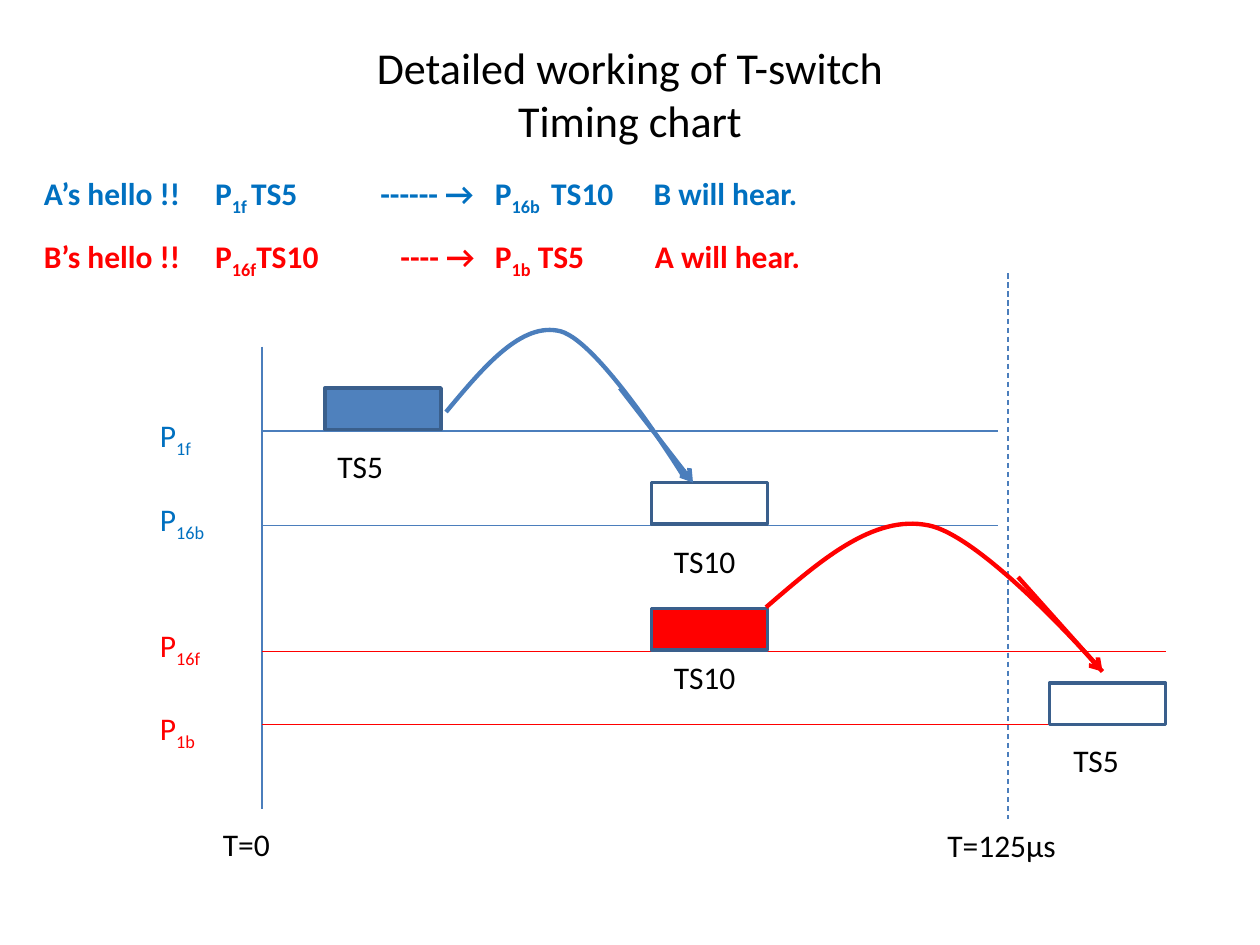
from lxml import etree
from pptx import Presentation
from pptx.dml.color import RGBColor
from pptx.enum.dml import MSO_LINE
from pptx.enum.shapes import MSO_CONNECTOR, MSO_SHAPE
from pptx.enum.text import MSO_ANCHOR, MSO_AUTO_SIZE, PP_ALIGN
from pptx.oxml.ns import qn
from pptx.util import Inches, Pt

COLORS = {
    "black": "000000",
    "white": "FFFFFF",
    "forward": "0070C0",
    "red": "FF0000",
    "line": "4B7EBC",
    "slot": "4F81BD",
    "outline": "3A5F8C",
}
RGB = {name: RGBColor.from_string(value) for name, value in COLORS.items()}

presentation = Presentation()
presentation.slide_width = Inches(10)
presentation.slide_height = Inches(7.5)
slide = presentation.slides.add_slide(presentation.slide_layouts[5])
shapes = slide.shapes


def add_label(left, top, width, parts, color="black", bold=False):
    box = shapes.add_textbox(Inches(left), Inches(top), Inches(width), Inches(0.4))
    box.text_frame.word_wrap = True
    paragraph = box.text_frame.paragraphs[0]
    font = paragraph.font
    font.name, font.size, font.bold = "Calibri", Pt(18), bold
    font.color.rgb = RGB[color]
    for index, text in enumerate(parts):
        run = paragraph.add_run()
        run.text = text
        if index == 1:
            run.font._element.set("baseline", "-25000")


def add_line(start, end, color, width=0.75):
    points = [Inches(value) for value in (*start, *end)]
    connector = shapes.add_connector(MSO_CONNECTOR.STRAIGHT, *points)
    connector.line.color.rgb = RGB[color]
    connector.line.width = Pt(width)
    etree.SubElement(connector._element.spPr, qn("a:effectLst"))
    return connector


title = shapes.title
title.left, title.top = Inches(0.5), Inches(0.3)
title.width, title.height = Inches(9), Inches(0.88)
title.text_frame.text = "Detailed working of T-switch\vTiming chart"
title.text_frame.auto_size = MSO_AUTO_SIZE.NONE
title.text_frame.vertical_anchor = MSO_ANCHOR.MIDDLE
title_paragraph = title.text_frame.paragraphs[0]
title_paragraph.alignment = PP_ALIGN.CENTER
title_paragraph.font.name = "Calibri"
title_paragraph.font.size = Pt(25.2)
title_paragraph.font.color.rgb = RGB["black"]

messages = [
    (1.33, "forward", [
        (0.25, ["A’s hello !!"]), (1.61, ["P", "1f ", "TS5"]), (2.92, ["------ →"]),
        (3.83, ["P", "16b ", " TS10"]), (5.09, ["B will hear."]),
    ]),
    (1.83, "red", [
        (0.25, ["B’s hello !!"]), (1.61, ["P", "16f", "TS10"]), (3.08, ["---- →"]),
        (3.83, ["P", "1b", " TS5"]), (5.1, ["A will hear."]),
    ]),
]
for top, color, columns in messages:
    for left, parts in columns:
        add_label(left, top, 1.5, parts, color, bold=True)

add_line((2.08, 2.75), (2.08, 6.42), "line")
add_line((8, 2.17), (8, 6.5), "line").line.dash_style = MSO_LINE.DASH
add_label(1.67, 6.5, 0.83, ["T=0"])
add_label(7.42, 6.51, 1.42, ["T=125µs"])

channels = [
    ("1f", 3.42, 7.92, 3.25, "line", "forward"),
    ("16b", 4.17, 7.92, 3.92, "line", "forward"),
    ("16f", 5.17, 9.25, 4.92, "red", "red"),
    ("1b", 5.75, 9.25, 5.58, "red", "red"),
]
for name, level, end, label_top, line_color, text_color in channels:
    add_line((2.08, level), (end, level), line_color)
    add_label(1.17, label_top, 0.83, ["P", name], text_color)

slots = [
    ("TS5", 2.58, 3.08, "slot", 2.58, 3.5),
    ("TS10", 5.17, 3.83, "white", 5.25, 4.25),
    ("TS10", 5.17, 4.83, "red", 5.25, 5.17),
    ("TS5", 8.33, 5.42, "white", 8.42, 5.83),
]
for name, left, top, fill, label_left, label_top in slots:
    slot = shapes.add_shape(
        MSO_SHAPE.RECTANGLE, Inches(left), Inches(top), Inches(0.92), Inches(0.33)
    )
    slot.shadow.inherit = False
    slot.fill.solid()
    slot.fill.fore_color.rgb = RGB[fill]
    slot.line.color.rgb = RGB["outline"]
    slot.line.width = Pt(2)
    add_label(label_left, label_top, 0.83, [name])

transfers = [
    ("line", [(3.54, 3.27), (3.84, 2.91), (4.14, 2.55), (4.45, 2.63),
              (4.77, 2.72), (5.43, 3.79), (5.43, 3.79)], (4.92, 3.08), (5.5, 3.83)),
    ("red", [(6.08, 4.82), (6.51, 4.45), (6.93, 4.08), (7.37, 4.17),
             (7.82, 4.26), (8.75, 5.33), (8.75, 5.33)], (8.08, 4.58), (8.75, 5.33)),
]
for color, controls, arrow_start, arrow_end in transfers:
    points = [(Inches(x), Inches(y)) for x, y in controls]
    builder = shapes.build_freeform(*points[0])
    builder.add_line_segments(points[1:], close=False)
    curve = builder.convert_to_shape()
    curve.shadow.inherit = False
    curve.fill.background()
    curve.line.color.rgb = RGB[color]
    curve.line.width = Pt(2.5)
    segments = list(curve._element.iter(qn("a:lnTo")))
    outline = segments[0].getparent()
    for first in range(0, len(segments), 3):
        bezier = etree.SubElement(outline, qn("a:cubicBezTo"))
        for segment in segments[first:first + 3]:
            bezier.append(segment[0])
            outline.remove(segment)

    arrow = add_line(arrow_start, arrow_end, color, 2.5)
    etree.SubElement(arrow.line._get_or_add_ln(), qn("a:tailEnd"), type="arrow")

presentation.save("out.pptx")
